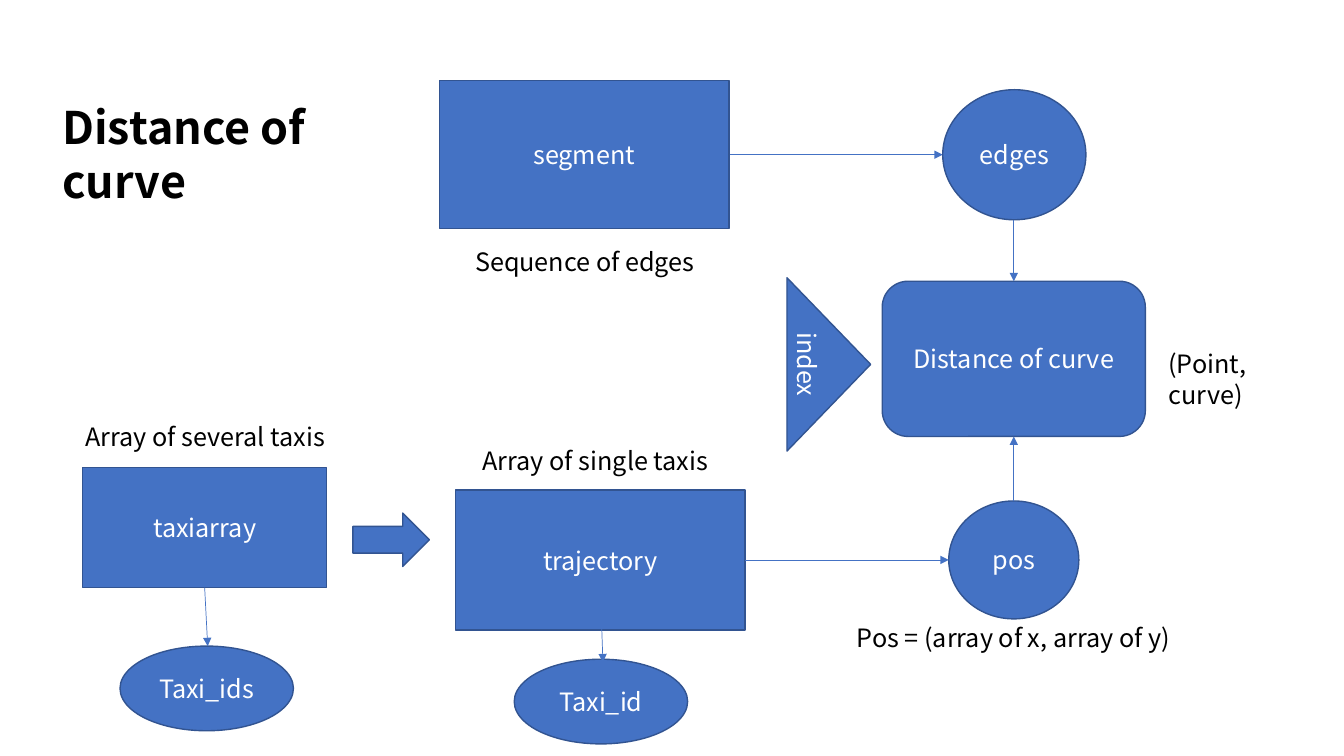
from lxml import etree
from pptx import Presentation, util as u
from pptx.dml.color import RGBColor
from pptx.enum import shapes, text
from pptx.oxml import ns

BLUE, EDGE, WHITE, BLACK = "4472C4", "325491", "FFFFFF", "000000"
FONT = "Noto Sans CJK KR"
KIND = shapes.MSO_SHAPE
CENTER, LEFT = text.PP_ALIGN.CENTER, text.PP_ALIGN.LEFT


def rgb(value):
    return RGBColor.from_string(value)


def write(sp, words, size=18, color=BLACK, bold=False, align=LEFT,
          anchor=text.MSO_ANCHOR.TOP):
    tf = sp.text_frame
    tf.word_wrap = True
    tf.vertical_anchor = anchor
    p = tf.paragraphs[0]
    p.alignment = align
    r = p.add_run()
    r.text = words
    r.font.name, r.font.size, r.font.bold = FONT, u.Pt(size), bold
    r.font.color.rgb = rgb(color)


def node(s, kind, x, y, w, h, words="", rotation=0):
    sp = s.shapes.add_shape(kind, *map(u.Inches, (x, y, w, h)))
    sp.shadow.inherit = False
    sp.rotation = rotation
    sp.fill.solid()
    sp.fill.fore_color.rgb = rgb(BLUE)
    sp.line.color.rgb = rgb(EDGE)
    sp.line.width = u.Pt(1)
    if words:
        write(sp, words, color=WHITE, align=CENTER, anchor=text.MSO_ANCHOR.MIDDLE)


def label(s, x, y, w, words, h=0.4, **style):
    tb = s.shapes.add_textbox(*map(u.Inches, (x, y, w, h)))
    write(tb, words, **style)


def arrow(s, x1, y1, x2, y2):
    c = s.shapes.add_connector(shapes.MSO_CONNECTOR.STRAIGHT,
                               *map(u.Inches, (x1, y1, x2, y2)))
    c.line.color.rgb = rgb(BLUE)
    c.line.width = u.Pt(0.5)
    etree.SubElement(c.line._get_or_add_ln(), ns.qn("a:tailEnd"), type="triangle")
    etree.SubElement(c._element.spPr, ns.qn("a:effectLst"))


def title(s, x, y, w, h):
    label(s, x, y, w, "Distance of curve", h=h, size=32, bold=True)


def segment_row(s, x, y, w, h):
    mid = y + h / 2
    arrow(s, x + w, mid, x + 4.99, mid)
    node(s, KIND.OVAL, x + 4.99, mid - 0.645, 1.42, 1.29, "edges")
    node(s, KIND.RECTANGLE, x, y, w, h, "segment")
    label(s, x + 0.23, y + h + 0.12, 2.42, "Sequence of edges", align=CENTER)


def trajectory_row(s, x, y, w, h):
    mid = y + h / 2
    node(s, KIND.RECTANGLE, x, y, w, h, "trajectory")
    node(s, KIND.OVAL, x + 4.89, mid - 0.585, 1.29, 1.17, "pos")
    arrow(s, x + w, mid, x + 4.89, mid)
    node(s, KIND.OVAL, x + 0.58, y + 1.68, 1.72, 0.84, "Taxi_id")
    arrow(s, x + 1.44, y + 1.13, x + 1.46, y + 1.71)
    label(s, x + 3.88, y + 1.26, 3.5, "Pos = (array of x, array of y)")
    label(s, x + 0.08, y - 0.49, 2.61, "Array of single taxis", align=CENTER)


def taxi_column(s, x, y, w, h):
    node(s, KIND.RECTANGLE, x, y, w, h, "taxiarray")
    node(s, KIND.RIGHT_ARROW, x + w + 0.26, y + 0.45, 0.76, 0.53)
    node(s, KIND.OVAL, x + 0.37, y + h + 0.58, 1.72, 0.84, "Taxi_ids")
    arrow(s, x + w / 2, y + h, x + 1.24, y + h + 0.58)
    label(s, x - 0.09, y - 0.51, 2.61, "Array of several taxis", align=CENTER)


def distance_block(s, x, y, w, h):
    mid = x + w / 2
    node(s, KIND.ROUNDED_RECTANGLE, x, y, w, h, "Distance of curve")
    arrow(s, mid, y - 0.61, mid, y)
    arrow(s, mid, y + h + 0.64, mid, y + h)
    node(s, KIND.ISOSCELES_TRIANGLE, x - 1.39, y + 0.41, 1.72, 0.83, "index", rotation=90)
    label(s, x + w + 0.13, y + 0.62, 1.61, "(Point, curve)")


def main():
    prs = Presentation()
    prs.slide_width, prs.slide_height = u.Inches(13.33), u.Inches(7.5)
    s = prs.slides.add_slide(prs.slide_layouts[6])
    title(s, 0.52, 0.94, 3.06, 1.18)
    segment_row(s, 4.36, 0.8, 2.87, 1.47)
    trajectory_row(s, 4.52, 4.86, 2.87, 1.39)
    taxi_column(s, 0.82, 4.64, 2.42, 1.19)
    distance_block(s, 8.75, 2.79, 2.61, 1.54)
    prs.save("out.pptx")


if __name__ == "__main__":
    main()
